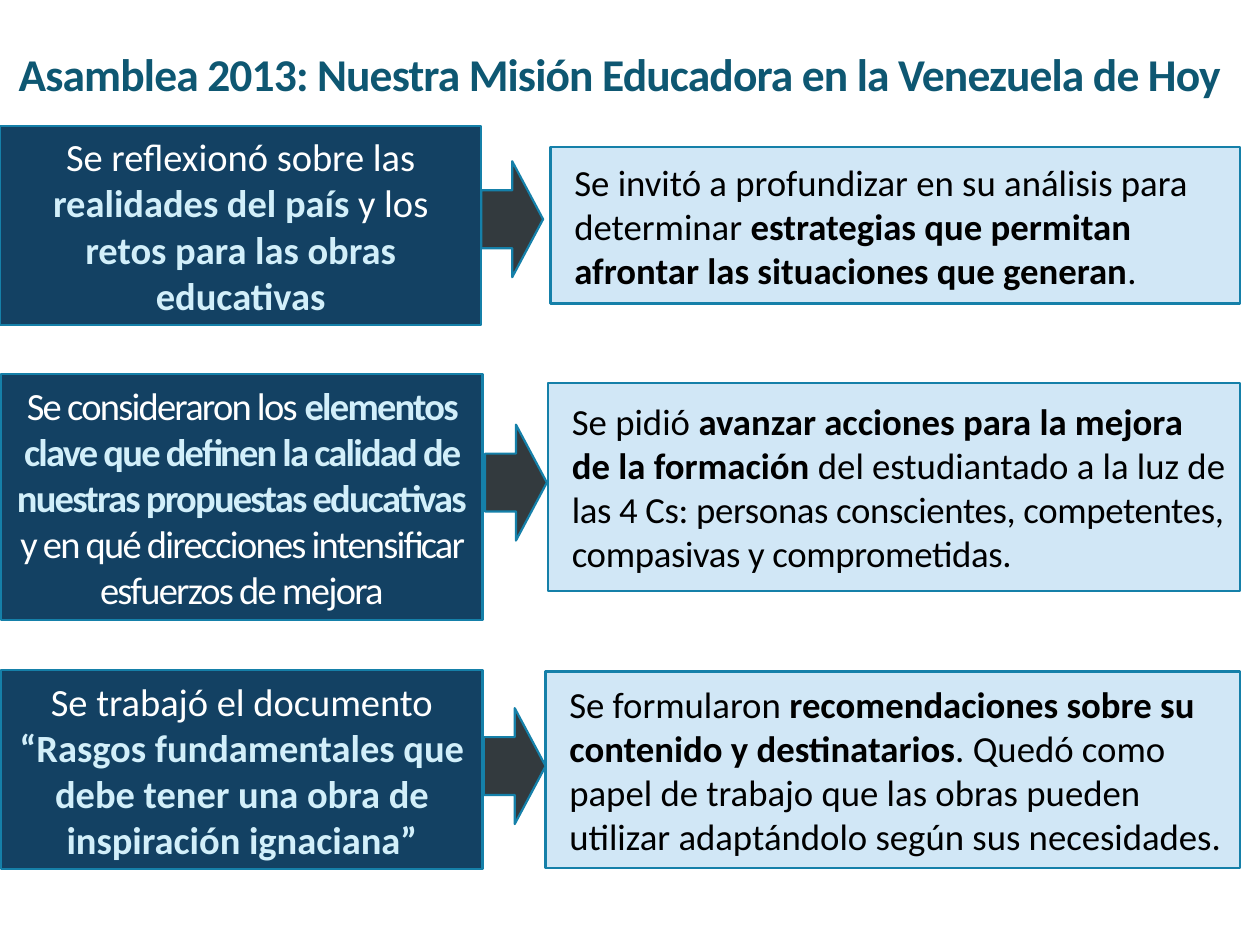
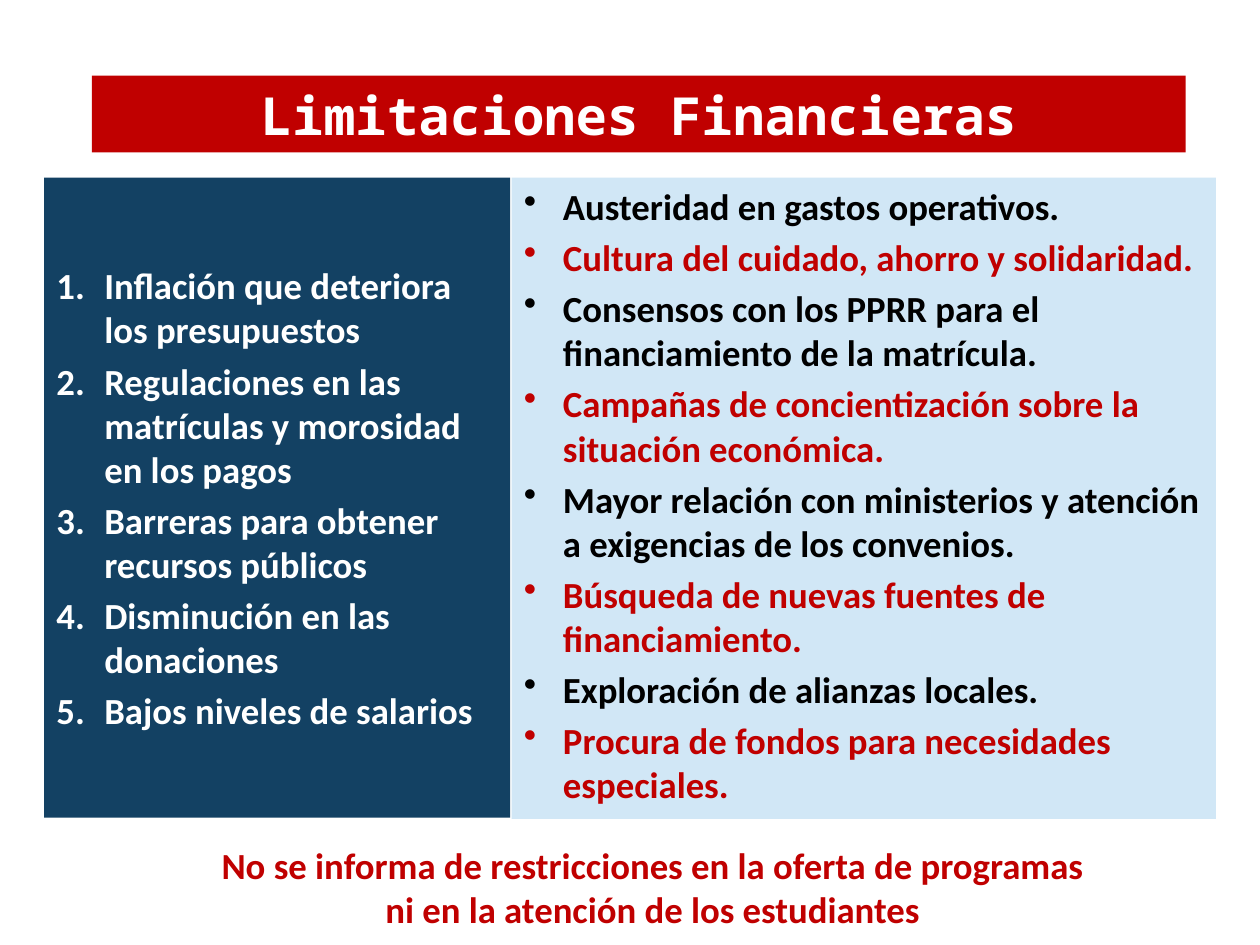
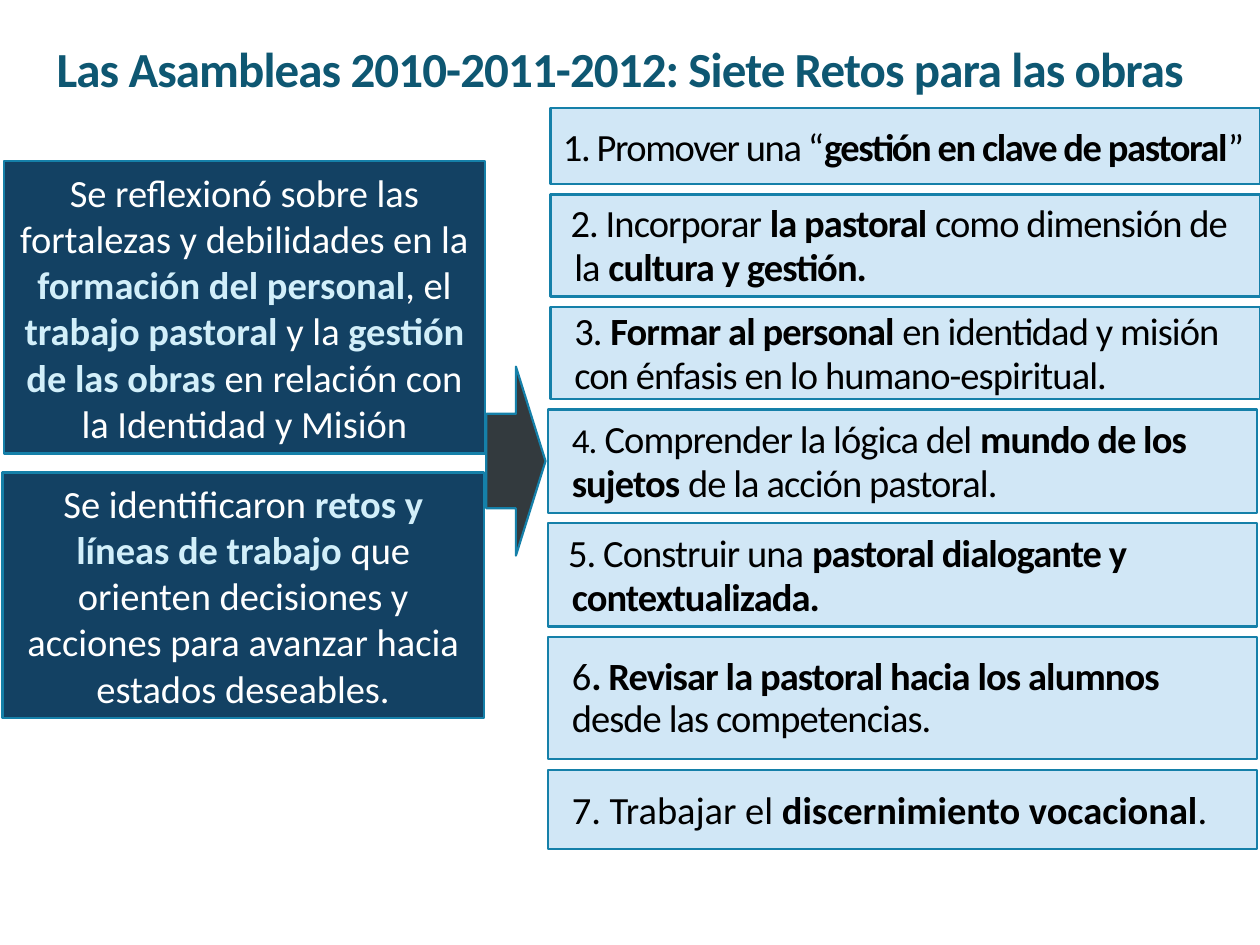
from lxml.etree import SubElement
from pptx import Presentation
from pptx.dml.color import RGBColor
from pptx.enum.shapes import MSO_SHAPE
from pptx.enum.text import MSO_ANCHOR, PP_ALIGN
from pptx.oxml.ns import qn
from pptx.util import Inches, Pt

NAVY, SKY, ICE, EDGE = "134163", "D1E7F6", "D2EFFA", "1580A9"
ARROW, TEAL, RED, WHITE, BLACK = "333A3E", "0E5772", "C00000", "FFFFFF", "000000"

# Asterisks enclose bold text. A list holds pieces with format overrides.
ASSEMBLY_TITLE = "Asamblea 2013: Nuestra Misión Educadora en la Venezuela de Hoy"
ASSEMBLY_STEPS = [
    dict(
        theme="Se reflexionó sobre las *realidades del país* y los "
              "*retos para las obras educativas*",
        theme_box=(0, 1, 3.82, 1.58), spacing=0,
        arrow=(3.82, 1.28),
        outcome="Se invitó a profundizar en su análisis para determinar "
                "*estrategias que permitan afrontar las situaciones que generan*.",
        outcome_box=(4.37, 1.17, 5.47, 1.24)),
    dict(
        theme="Se consideraron los *elementos clave que definen la calidad de "
              "nuestras propuestas educativas* y en qué direcciones intensificar "
              "esfuerzos de mejora",
        theme_box=(0.01, 2.97, 3.82, 1.95), spacing=-1,
        arrow=(3.85, 3.37),
        outcome=[("Se pidió *avanzar acciones para la mejora de la formación* "
                  "del estudiantado a la luz de ", {}),
                 ("las 4 Cs: personas conscientes, competentes, compasivas y "
                  "comprometidas.", {"spacing": -0.2})],
        outcome_box=(4.35, 3.04, 5.49, 1.65)),
    dict(
        theme="Se trabajó el documento *“Rasgos fundamentales que debe tener "
              "una obra de inspiración ignaciana”*",
        theme_box=(0.01, 5.32, 3.82, 1.58), spacing=0,
        arrow=(3.84, 5.62),
        outcome="Se formularon *recomendaciones sobre su contenido y "
                "destinatarios*. Quedó como papel de trabajo que las obras pueden "
                "utilizar adaptándolo según sus necesidades.",
        outcome_box=(4.33, 5.33, 5.51, 1.56)),
]

FINANCE_TITLE = "Limitaciones Financieras"
LIMITATIONS = [
    "Inflación que deteriora los presupuestos",
    "Regulaciones en las matrículas y morosidad en los pagos",
    "Barreras para obtener recursos públicos",
    "Disminución en las donaciones",
    "Bajos niveles de salarios",
]
RESPONSES = [
    "Austeridad en gastos operativos.",
    "Cultura del cuidado, ahorro y solidaridad.",
    "Consensos con los PPRR para el financiamiento de la matrícula.",
    "Campañas de concientización sobre la situación económica.",
    "Mayor relación con ministerios y atención a exigencias de los convenios.",
    "Búsqueda de nuevas fuentes de financiamiento.",
    "Exploración de alianzas locales.",
    "Procura de fondos para necesidades especiales.",
]
FINANCE_NOTE = ("No se informa de restricciones en la oferta de programas "
                "ni en la atención de los estudiantes")

CHALLENGES_TITLE = "Las Asambleas 2010-2011-2012: Siete Retos para las obras"
REFLECTIONS = [
    ("Se reflexionó sobre las fortalezas y debilidades en la *formación del "
     "personal*, el *trabajo pastoral* y la *gestión de las obras* en relación "
     "con la Identidad y Misión", (0.03, 1.28, 3.82, 2.32)),
    ("Se identificaron *retos y líneas de trabajo* que orienten decisiones y "
     "acciones para avanzar hacia estados deseables.", (0.02, 3.75, 3.82, 1.95)),
]
# text, left, height, paragraph format
CHALLENGES = [
    ("1. Promover una “*gestión en clave de pastoral*”", 4.37, 0.6,
     dict(spacing=-0.8, first=-0.09)),
    ("2. Incorporar *la pastoral* como dimensión de la *cultura y gestión.*",
     4.37, 0.81, dict(spacing=-0.5, first=-0.03, leading=Pt(25))),
    ("3. *Formar al personal* en identidad y misión con énfasis en lo "
     "humano-espiritual.", 4.37, 0.73, dict(spacing=-0.5, leading=Pt(25))),
    ([("4. ", {"size": 20}),
      ("Comprender la lógica del *mundo de los sujetos* de la acción pastoral.", {})],
     4.35, 0.82, dict(spacing=-0.5, leading=Pt(25))),
    ("5. Construir una *pastoral dialogante y contextualizada.*", 4.35, 0.82,
     dict(spacing=-0.5, first=-0.03, leading=Pt(25))),
    ("6*. Revisar la pastoral hacia los alumnos* desde las competencias.",
     4.35, 0.97, dict(spacing=-0.5, leading=Pt(24))),
    ("7. Trabajar el *discernimiento vocacional*.", 4.35, 0.63, {}),
]
CHALLENGES_TOP, CHALLENGES_BOTTOM = 0.86, 6.74


def rgb(hex_color):
    return RGBColor.from_string(hex_color)


def add_run(paragraph, text, size, color, bold, font, spacing):
    run = paragraph.add_run()
    run.text = text
    run.font.size, run.font.name, run.font.bold = Pt(size), font, bold
    run.font.color.rgb = rgb(color)
    if spacing:
        run.font._element.set("spc", str(round(spacing * 100)))


def write(shape, text, size=21, color=BLACK, accent=None, bold=False,
          font="Calibri", spacing=0, align=PP_ALIGN.LEFT, left=0, first=0,
          leading=None, before=0, after=0, bullet=None, new=False):
    """Write one paragraph; bullet is a bullet element's name and attributes."""
    frame = shape.text_frame
    paragraph = frame.add_paragraph() if new else frame.paragraphs[0]
    paragraph.alignment = align
    paragraph.space_before, paragraph.space_after = Pt(before), Pt(after)
    if leading:
        paragraph.line_spacing = leading
    properties = paragraph._p.get_or_add_pPr()
    properties.set("marL", str(Inches(left)))
    properties.set("indent", str(Inches(first)))
    if bullet:
        tag, attributes = bullet
        SubElement(properties, qn(tag), attributes)
    pieces = [(text, {})] if isinstance(text, str) else text
    for piece, override in pieces:
        for i, part in enumerate(piece.split("*")):
            strong = i % 2 == 1
            if part:
                look = dict(size=size, color=accent if strong and accent else color,
                            bold=bold or strong, font=font, spacing=spacing)
                add_run(paragraph, part, **(look | override))


def add_box(slide, place, fill, line=EDGE, kind=MSO_SHAPE.RECTANGLE,
            anchor=MSO_ANCHOR.MIDDLE):
    box = slide.shapes.add_shape(kind, *map(Inches, place))
    box.shadow.inherit = False
    box.fill.solid()
    box.fill.fore_color.rgb = rgb(fill)
    if line:
        box.line.color.rgb = rgb(line)
        box.line.width = Pt(1.25)
    else:
        box.line.fill.background()
    box.text_frame.word_wrap = True
    box.text_frame.vertical_anchor = anchor
    return box


def add_label(slide, place, text, anchor=MSO_ANCHOR.TOP, **look):
    label = slide.shapes.add_textbox(*map(Inches, place))
    label.text_frame.word_wrap = True
    label.text_frame.vertical_anchor = anchor
    write(label, text, bold=True, align=PP_ALIGN.CENTER, **look)


def add_title(slide, text, top, size):
    add_label(slide, (0, top, 9.84, 0.62), text, anchor=MSO_ANCHOR.BOTTOM,
              size=size, color=TEAL, spacing=-0.5, leading=0.85)


def add_theme(slide, text, place, spacing=0):
    write(add_box(slide, place, NAVY), text, size=22, color=WHITE, accent=ICE,
          spacing=spacing, align=PP_ALIGN.CENTER)


def add_outcome(slide, text, place, **look):
    write(add_box(slide, place, SKY), text, left=0.09, **look)


def add_arrow(slide, place):
    add_box(slide, place, ARROW, kind=MSO_SHAPE.RIGHT_ARROW)


def build_assembly(slide):
    add_title(slide, ASSEMBLY_TITLE, 0.23, 26)
    for step in ASSEMBLY_STEPS:
        add_theme(slide, step["theme"], step["theme_box"], step["spacing"])
        add_outcome(slide, step["outcome"], step["outcome_box"])
        add_arrow(slide, (*step["arrow"], 0.49, 0.92))


def build_finances(slide):
    band = add_box(slide, (0.73, 0.6, 8.68, 0.61), RED, line=None)
    write(band, FINANCE_TITLE, size=30, color=WHITE, bold=True,
          font="Noto Sans Mono", align=PP_ALIGN.CENTER)
    add_label(slide, (1.52, 6.64, 7.32, 0.81), FINANCE_NOTE, color=RED,
              before=2, after=2)

    limits = add_box(slide, (0.35, 1.41, 3.7, 5.08), NAVY, line=None)
    for i, limitation in enumerate(LIMITATIONS):
        write(limits, limitation, color=WHITE, bold=True, left=0.38, first=-0.38,
              before=2, after=2, new=i > 0,
              bullet=("a:buAutoNum", {"type": "arabicPeriod"}))

    answers = add_box(slide, (4.06, 1.41, 5.59, 5.09), SKY, line=None,
                      anchor=MSO_ANCHOR.TOP)
    for i, response in enumerate(RESPONSES):
        write(answers, response, color=RED if i % 2 else BLACK, bold=True,
              left=0.31, first=-0.31, after=4, new=i > 0,
              bullet=("a:buChar", {"char": "•"}))


def build_challenges(slide):
    add_title(slide, CHALLENGES_TITLE, 0.2, 28)
    for text, place in REFLECTIONS:
        add_theme(slide, text, place)
    add_arrow(slide, (3.86, 2.91, 0.47, 1.5))
    filled = sum(height for _, _, height, _ in CHALLENGES)
    gap = (CHALLENGES_BOTTOM - CHALLENGES_TOP - filled) / (len(CHALLENGES) - 1)
    top = CHALLENGES_TOP
    for text, left, height, look in CHALLENGES:
        add_outcome(slide, text, (left, top, 5.63, height), size=22, **look)
        top += height + gap


def main():
    deck = Presentation()
    deck.slide_width, deck.slide_height = Inches(10), Inches(7.5)
    for build in (build_assembly, build_finances, build_challenges):
        build(deck.slides.add_slide(deck.slide_layouts[6]))
    deck.save("out.pptx")


if __name__ == "__main__":
    main()
